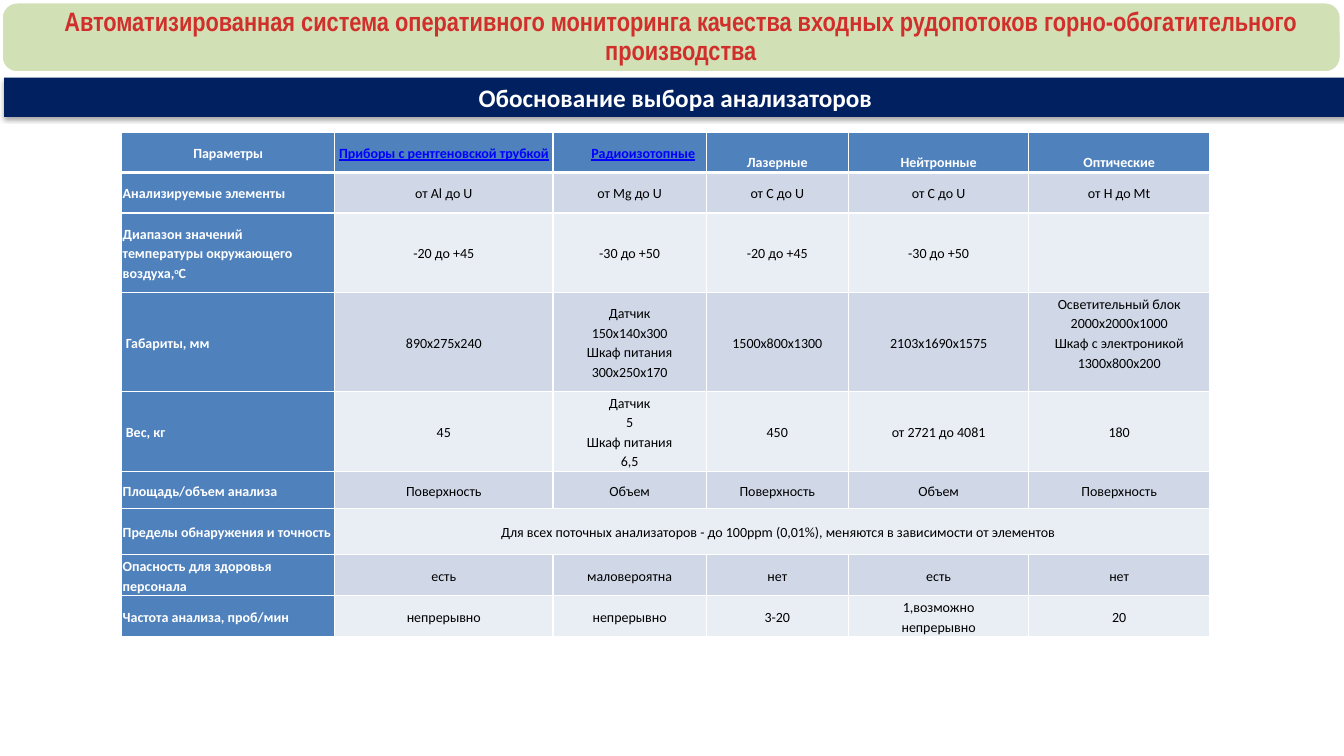
from lxml.etree import SubElement as Sub
from pptx import Presentation as Deck
from pptx.dml.color import RGBColor as RGB
from pptx.enum.shapes import MSO_SHAPE as Kind
from pptx.enum.text import MSO_ANCHOR as Anchor, PP_ALIGN as Align
from pptx.oxml import parse_xml
from pptx.oxml.ns import nsdecls, qn
from pptx.util import Pt

WHITE = RGB(255, 255, 255)
BLACK = RGB(0, 0, 0)
NAVY = RGB(0x00, 0x20, 0x60)
GREEN = RGB(0xD2, 0xE1, 0xB5)
RED = RGB(0xD0, 0x2F, 0x2C)
LINK = RGB(0, 0, 255)
HEAD = RGB(0x4F, 0x81, 0xBD)
DARK = RGB(0xD0, 0xD8, 0xE8)
LIGHT = RGB(0xE9, 0xED, 0xF4)

TITLE = ("Автоматизированная система оперативного мониторинга качества "
         "входных рудопотоков горно-обогатительного производства")
TOPIC = "Обоснование выбора анализаторов"
WIDTHS = [152, 156, 109.5, 101.5, 129, 129]
HEIGHTS = [28.8, 28.8, 57, 70.5, 57, 26.5, 33, 28.8, 28.8]
ROWS = [
    ["Параметры", "Приборы с рентгеновской трубкой", "Радиоизотопные",
     "Лазерные", "Нейтронные", "Оптические"],
    ["Анализируемые элементы", "от Al до U", "от Mg до U", "от C до U",
     "от C до U", "от H до Mt"],
    ["Диапазон значений\nтемпературы окружающего\nвоздуха,^o^C",
     "-20 до +45", "-30 до +50", "-20 до +45", "-30 до +50", ""],
    ["Габариты, мм", "890x275x240",
     "Датчик\n150х140х300\nШкаф питания\n300х250х170",
     "1500x800x1300", "2103х1690х1575",
     "Осветительный блок\n2000x2000x1000\nШкаф с электроникой\n1300х800х200"],
    ["Вес, кг", "45", "Датчик\n5\nШкаф питания\n6,5", "450",
     "от 2721 до 4081", "180"],
    ["Площадь/объем анализа", "Поверхность", "Объем", "Поверхность",
     "Объем", "Поверхность"],
    ["Пределы обнаружения и точность",
     "Для всех поточных анализаторов - до 100ppm (0,01%), "
     "меняются в зависимости от элементов"],
    ["Опасность для здоровья\nперсонала", "есть", "маловероятна", "нет",
     "есть", "нет"],
    ["Частота анализа, проб/мин", "непрерывно", "непрерывно", "3-20",
     "1,возможно\nнепрерывно", "20"],
]
INDENTS = {(0, 2): 20, (3, 0): 3, (4, 0): 3, (6, 1): 9}
ANCHORS = {(0, 3): Anchor.BOTTOM, (0, 4): Anchor.BOTTOM,
           (0, 5): Anchor.BOTTOM, (3, 5): Anchor.TOP}
LINKS = {(0, 1), (0, 2)}


def style(font, face, size, color, bold):
    """Set the face, size, colour and weight of a font."""
    font.name, font.size, font.bold = face, Pt(size), bold
    font.color.rgb = color


def banner(slide, box, kind, curve, fill, text, face, size, color):
    """Draw a filled bar with one centred line of text in the box."""
    bar = slide.shapes.add_shape(kind, *map(Pt, box))
    bar.adjustments[0] = curve
    bar.shadow.inherit = False
    bar.fill.solid()
    bar.fill.fore_color.rgb = fill
    bar.line.fill.background()
    frame = bar.text_frame
    frame.word_wrap = True
    frame.vertical_anchor = Anchor.MIDDLE
    para = frame.paragraphs[0]
    para.alignment = Align.CENTER
    run = para.add_run()
    run.text = text
    style(run.font, face, size, color, True)
    return bar


def title(slide, box):
    """Place the green title bar in the box."""
    bar = banner(slide, box, Kind.ROUNDED_RECTANGLE, 0.22, GREEN,
                 TITLE, "Arial Narrow", 19, RED)
    bar.line.color.rgb = WHITE
    bar.line.width = Pt(2)
    frame = bar.text_frame
    frame.margin_left = Pt(21.6)
    frame.margin_right = frame.margin_top = frame.margin_bottom = Pt(8)
    frame.paragraphs[0].line_spacing = 0.9


def topic(slide, box):
    """Place the navy topic bar with its soft shadow in the box."""
    bar = banner(slide, box, Kind.ROUNDED_RECTANGLE, 0, NAVY,
                 TOPIC, "Calibri", 18, WHITE)
    props = bar.fill._xPr
    props.remove(props.find(qn("a:effectLst")))
    props.append(parse_xml(
        f'<a:effectLst {nsdecls("a")}><a:outerShdw blurRad="{Pt(3.1)}" '
        f'dist="{Pt(1.8)}" dir="5400000" rotWithShape="0">'
        '<a:srgbClr val="000000"><a:alpha val="35000"/></a:srgbClr>'
        '</a:outerShdw></a:effectLst>'))


def border(cell, row):
    """Give a cell white edges, with a thick one under the head row."""
    props = cell._tc.get_or_add_tcPr()
    thick = {(0, "B"), (1, "T")}
    for side in "LRTB":
        width = 3 if (row, side) in thick else 1
        line = Sub(props, qn(f"a:ln{side}"), w=str(Pt(width)))
        Sub(Sub(line, qn("a:solidFill")), qn("a:srgbClr"), val=str(WHITE))


def write(cell, text, color, bold, link):
    """Write text in a cell, with carets round a raised part."""
    para = cell.text_frame.paragraphs[0]
    para.line_spacing = 1.15
    para.font.size = Pt(10)
    for row, line in enumerate(text.split("\n")):
        if row:
            para.add_line_break()
        for part, words in enumerate(line.split("^")):
            if not words:
                continue
            run = para.add_run()
            run.text = words
            style(run.font, "Calibri", 10, color, bold)
            if link:
                run.font.underline = True
            if part % 2:
                run._r.get_or_add_rPr().set("baseline", "30000")
    return para


def table(slide, box):
    """Place the table of analyser types in the box."""
    grid = slide.shapes.add_table(len(ROWS), len(WIDTHS),
                                  *map(Pt, box)).table
    grid.first_row = grid.horz_banding = False
    for col, width in zip(grid.columns, WIDTHS):
        col.width = Pt(width)
    for line, height in zip(grid.rows, HEIGHTS):
        line.height = Pt(height)
    for row, texts in enumerate(ROWS):
        if len(texts) < len(WIDTHS):
            grid.cell(row, 1).merge(grid.cell(row, len(WIDTHS) - 1))
        for col in range(len(WIDTHS)):
            cell, spot = grid.cell(row, col), (row, col)
            head = row == 0 or col == 0
            border(cell, row)
            cell.fill.solid()
            cell.fill.fore_color.rgb = (
                HEAD if head else DARK if row % 2 else LIGHT)
            cell.margin_right = cell.margin_top = cell.margin_bottom = Pt(0.7)
            cell.margin_left = Pt(INDENTS.get(spot, 0.7))
            cell.vertical_anchor = ANCHORS.get(spot, Anchor.MIDDLE)
            if col < len(texts):
                link = spot in LINKS
                color = LINK if link else WHITE if head else BLACK
                para = write(cell, texts[col], color, head, link)
                para.alignment = (
                    Align.LEFT if row and not col else Align.CENTER)


def main():
    """Build the slide and save it."""
    deck = Deck()
    deck.slide_width, deck.slide_height = Pt(960), Pt(540)
    slide = deck.slides.add_slide(deck.slide_layouts[6])
    table(slide, (87, 94.5, sum(WIDTHS), sum(HEIGHTS)))
    topic(slide, (3, 55.5, 959, 28))
    title(slide, (1, 1.5, 957, 50.4))
    deck.save("out.pptx")


if __name__ == "__main__":
    main()
